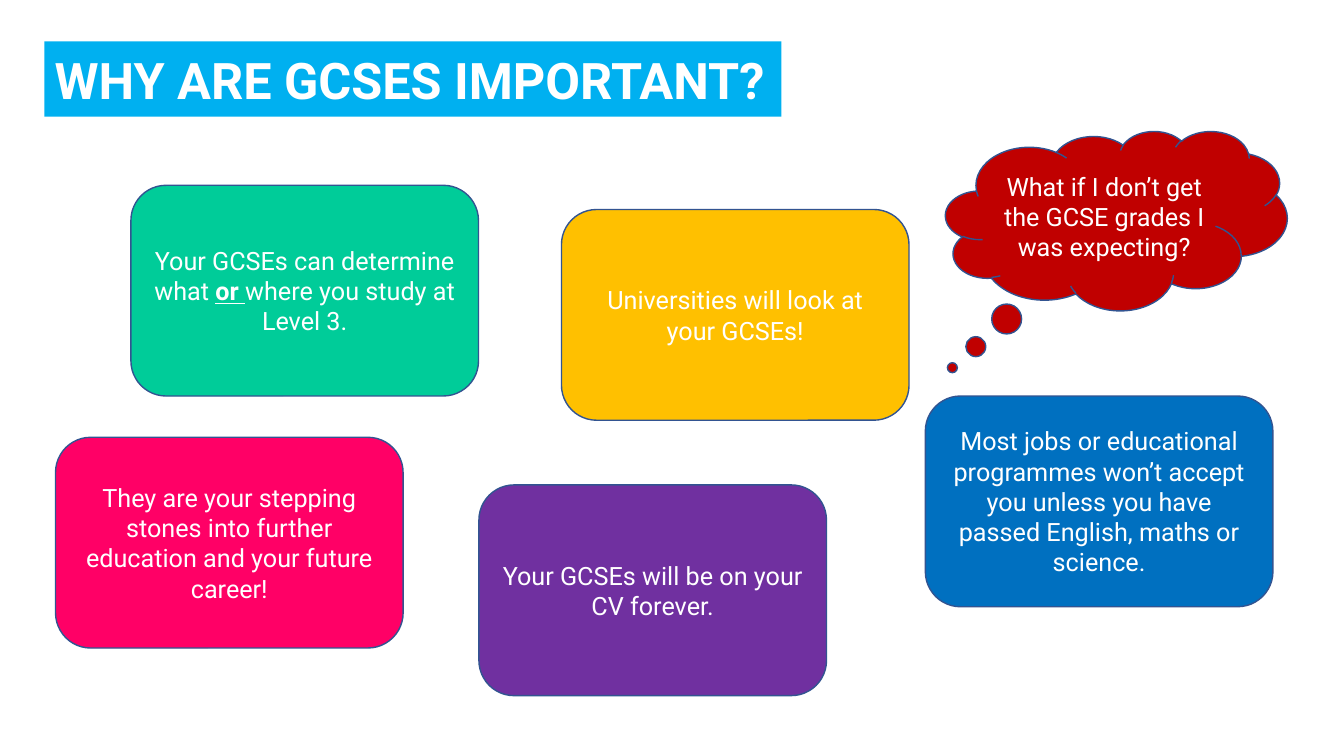
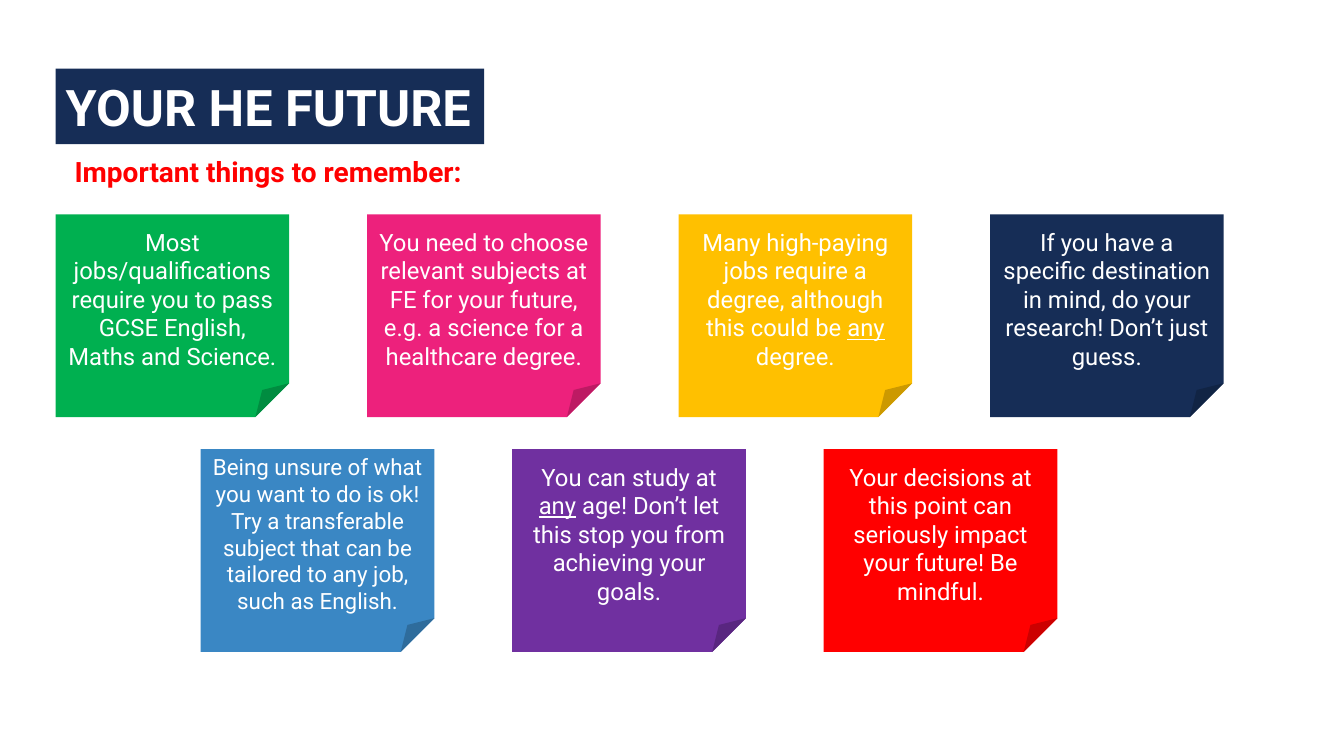
from dataclasses import dataclass

from pptx import Presentation
from pptx.dml.color import RGBColor as RGB
from pptx.enum.shapes import MSO_SHAPE as SHAPE
from pptx.enum.text import MSO_ANCHOR as ANCHOR, MSO_AUTO_SIZE as FIT, PP_ALIGN as ALIGN
from pptx.util import Cm, Pt


@dataclass(frozen=True)
class Theme:
    font: str = "Roboto"
    title_size: int = 36
    subtitle_size: int = 20
    card_size: int = 18
    note_size: int = 17
    small_note_size: int = 16
    white: str = "FFFFFF"
    outline: str = "325491"
    sky: str = "00B0F0"
    navy: str = "162D56"
    rose: str = "FF0066"
    mint: str = "00CC99"
    purple: str = "7030A0"
    amber: str = "FFC000"
    blue: str = "0070C0"
    crimson: str = "C00000"
    green: str = "00B050"
    pink: str = "ED217C"
    steel: str = "3A87C4"
    red: str = "FF0000"


T = Theme()


def write(sp, text, size, color=T.white, bold=False, align=ALIGN.CENTER,
          anchor=ANCHOR.MIDDLE, wrap=True, fit=FIT.NONE, strong=False):
    """Fill sp with text; parts between underscores are underlined, and bold if strong."""
    tf = sp.text_frame
    tf.word_wrap, tf.auto_size, tf.vertical_anchor = wrap, fit, anchor
    p = tf.paragraphs[0]
    p.alignment = align
    for i, part in enumerate(text.split("_")):
        marked = i % 2 == 1
        r = p.add_run()
        r.text = part
        r.font.name, r.font.size = T.font, Pt(size)
        r.font.color.rgb = RGB.from_string(color)
        r.font.bold = bold or (strong and marked)
        if marked:
            r.font.underline = True


def add_panel(s, kind, box, fill, text, size, outlined=False, **fmt):
    sp = s.shapes.add_shape(kind, *map(Cm, box))
    sp.shadow.inherit = False
    sp.fill.solid()
    sp.fill.fore_color.rgb = RGB.from_string(fill)
    if outlined:
        sp.line.color.rgb = RGB.from_string(T.outline)
        sp.line.width = Pt(1)
    else:
        sp.line.fill.background()
    write(sp, text, size, **fmt)
    return sp


prs = Presentation()
prs.slide_width, prs.slide_height = Cm(33.87), Cm(19.05)

# Slides with their title bands
titles = [
    ("WHY ARE GCSES IMPORTANT?", 1.12, 1.04, 18.57, T.sky),
    ("YOUR HE FUTURE", 1.4, 1.73, 10.8, T.navy),
]
slides = []
for text, left, top, width, fill in titles:
    s = prs.slides.add_slide(prs.slide_layouts[5])
    title = s.shapes.title
    title.left, title.top, title.width, title.height = map(Cm, (left, top, width, 1.9))
    title.fill.solid()
    title.fill.fore_color.rgb = RGB.from_string(fill)
    write(title, text, T.title_size, bold=True, align=ALIGN.LEFT)
    slides.append(s)
reasons, future = slides

# Reasons: scattered cards and a thought cloud
CARD_W, CARD_H = 8.76, 5.31
cards = [
    (1.4, 11.02, T.rose,
     "They are your stepping stones into further education and your future career!"),
    (3.3, 4.67, T.mint, "Your GCSEs can determine what _or _where you study at Level 3."),
    (12.07, 12.22, T.purple, "Your GCSEs will be on your CV forever."),
    (14.15, 5.28, T.amber, "Universities will look at your GCSEs!"),
    (23.32, 9.98, T.blue,
     "Most jobs or educational programmes won’t accept you unless you have "
     "passed English, maths or science."),
]
for left, top, fill, text in cards:
    add_panel(reasons, SHAPE.ROUNDED_RECTANGLE, (left, top, CARD_W, CARD_H), fill, text,
              T.card_size, outlined=True, strong=True)

cloud = add_panel(reasons, SHAPE.CLOUD_CALLOUT, (23.83, 3.3, 8.61, 4.52), T.crimson,
                  "What if I don’t get the GCSE grades I was expecting?",
                  T.card_size, outlined=True)
cloud.adjustments[0], cloud.adjustments[1] = -0.48, 0.82

# Future: subtitle and two rows of sticky notes
subtitle = future.shapes.add_textbox(Cm(1.63), Cm(3.76), Cm(10.34), Cm(1.12))
write(subtitle, "Important things to remember:", T.subtitle_size, color=T.red, bold=True,
      align=ALIGN.LEFT, anchor=ANCHOR.TOP, wrap=False, fit=FIT.SHAPE_TO_FIT_TEXT)

NOTE_W, NOTE_H, NOTE_STEP = 5.89, 5.11, 7.85
note_rows = [
    (1.4, 5.4, [
        (T.green, T.note_size,
         "Most jobs/qualifications require you to pass GCSE English, Maths and Science."),
        (T.pink, T.note_size,
         "You need to choose relevant subjects at FE for your future, "
         "e.g. a science for a healthcare degree."),
        (T.amber, T.note_size,
         "Many high-paying jobs require a degree, although this could be _any _degree."),
        (T.navy, T.note_size,
         "If you have a specific destination in mind, do your research! Don’t just guess."),
    ]),
    (5.06, 11.32, [
        (T.steel, T.small_note_size,
         "Being unsure of what you want to do is ok! Try a transferable subject "
         "that can be tailored to any job, such as English."),
        (T.purple, T.note_size,
         "You can study at _any_ age! Don’t let this stop you from achieving your goals."),
        (T.red, T.note_size,
         "Your decisions at this point can seriously impact your future! Be mindful."),
    ]),
]
for left, top, notes in note_rows:
    for i, (fill, size, text) in enumerate(notes):
        add_panel(future, SHAPE.FOLDED_CORNER, (left + i * NOTE_STEP, top, NOTE_W, NOTE_H),
                  fill, text, size)

prs.save("out.pptx")
